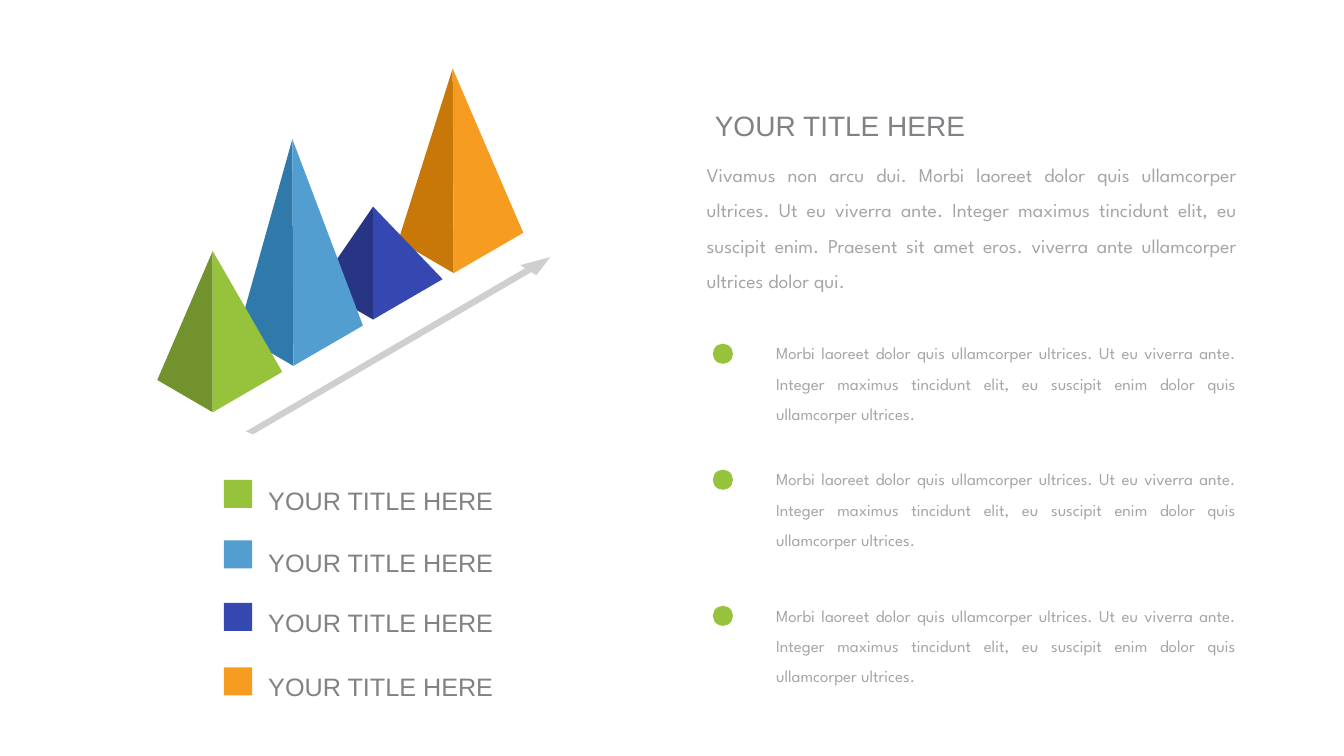
from pptx import Presentation
from pptx.dml.color import RGBColor
from pptx.enum.shapes import MSO_SHAPE as Preset
from pptx.enum.text import MSO_ANCHOR as Anchor, PP_ALIGN as Align
from pptx.util import Emu, Pt

PX = 9144
GREEN, DARK_GREEN = RGBColor(0x97, 0xC3, 0x3C), RGBColor(0x71, 0x92, 0x2D)
BLUE, DARK_BLUE = RGBColor(0x53, 0x9E, 0xD0), RGBColor(0x2F, 0x7A, 0xAB)
INDIGO, DARK_INDIGO = RGBColor(0x35, 0x47, 0xB1), RGBColor(0x28, 0x35, 0x85)
ORANGE, DARK_ORANGE = RGBColor(0xF5, 0x9C, 0x21), RGBColor(0xC8, 0x78, 0x09)
ARROW_GRAY = RGBColor(0xD0, 0xCE, 0xCE)
TITLE_GRAY = RGBColor(0x81, 0x82, 0x85)
BODY_GRAY = RGBColor(0xA6, 0xA6, 0xA6)
TITLE_FONT, BODY_FONT = "Arial", "League Spartan"

TITLE = "YOUR TITLE HERE"
INTRO = (
    "Vivamus non arcu dui. Morbi laoreet dolor quis ullamcorper ultrices. "
    "Ut eu viverra ante. Integer maximus tincidunt elit, eu suscipit enim. "
    "Praesent sit amet eros. viverra ante ullamcorper ultrices dolor qui."
)
POINT = (
    "Morbi laoreet dolor quis ullamcorper ultrices. Ut eu viverra ante. "
    "Integer maximus tincidunt elit, eu suscipit enim dolor quis ullamcorper ultrices."
)


def px(*lengths):
    return [Emu(length * PX) for length in lengths]


def paint(shape, color):
    shape.shadow.inherit = False
    shape.fill.solid()
    shape.fill.fore_color.rgb = color
    shape.line.fill.background()


def add_text(slide, box, text, *, size, font=BODY_FONT, color=BODY_GRAY,
             align=Align.JUSTIFY, inset=10):
    frame = slide.shapes.add_textbox(*px(*box)).text_frame
    frame.word_wrap = True
    frame.vertical_anchor = Anchor.MIDDLE
    frame.margin_left = Emu(inset * PX)
    paragraph = frame.paragraphs[0]
    paragraph.alignment = align
    paragraph.line_spacing = 1.5
    run = paragraph.add_run()
    run.text = text
    run.font.size = Pt(size)
    run.font.name = font
    run.font.color.rgb = color


def add_title(slide, box, size, inset):
    add_text(slide, box, TITLE, size=size, font=TITLE_FONT, color=TITLE_GRAY,
             align=Align.LEFT, inset=inset)


def add_preset(slide, preset, box, color):
    paint(slide.shapes.add_shape(preset, *px(*box)), color)


def add_polygon(slide, points, color):
    builder = slide.shapes.build_freeform(*points[0], scale=PX)
    builder.add_line_segments(points[1:], close=True)
    paint(builder.convert_to_shape(), color)


def add_pyramid(slide, apex, base, dark, light):
    x, y = base
    add_polygon(slide, [base, (x - 55, y - 32), apex], dark)
    add_polygon(slide, [apex, (x + 69, y - 40), base], light)


def add_pyramid_chart(slide, box):
    left, top, width, height = box
    right, bottom = left + width, top + height
    add_polygon(slide, [(right, top + 187), (right - 14, top + 205),
                        (right - 30, top + 195)], ARROW_GRAY)
    add_polygon(slide, [(right - 19, top + 202), (left + 95, bottom),
                        (left + 88, bottom - 3), (right - 25, top + 198)], ARROW_GRAY)
    pyramids = [
        (293, 0, 294, 203, DARK_ORANGE, ORANGE),
        (214, 137, 214, 249, DARK_INDIGO, INDIGO),
        (134, 70, 135, 295, DARK_BLUE, BLUE),
        (55, 181, 55, 341, DARK_GREEN, GREEN),
    ]
    for apex_x, apex_y, base_x, base_y, dark, light in pyramids:
        add_pyramid(slide, (left + apex_x, top + apex_y),
                    (left + base_x, top + base_y), dark, light)


def add_legend(slide, box):
    left, top, width, _ = box
    entries = [(0, 0, GREEN), (60, 62, BLUE), (122, 121, INDIGO), (186, 185, ORANGE)]
    for swatch_top, title_top, color in entries:
        add_preset(slide, Preset.RECTANGLE, (left, top + swatch_top, 28, 28), color)
        add_title(slide, (left + 27, top + title_top, width - 27, 25), 18, 17)


def add_description(slide, box):
    left, top, width, _ = box
    add_title(slide, (left, top, width, 59), 20, 18)
    add_text(slide, (left, top + 37, width, 194), INTRO, size=14)
    for offset in (218, 343, 478):
        add_text(slide, (left + 69, top + offset, width - 70, 143), POINT, size=12)
        add_preset(slide, Preset.OVAL, (left + 16, top + offset + 37, 20, 20), GREEN)


def main():
    presentation = Presentation()
    presentation.slide_width, presentation.slide_height = px(1333, 750)
    slide = presentation.slides.add_slide(presentation.slide_layouts[6])
    add_pyramid_chart(slide, (156, 68, 390, 363))
    add_legend(slide, (222, 476, 312, 214))
    add_description(slide, (691, 86, 546, 621))
    presentation.save("out.pptx")


if __name__ == "__main__":
    main()
